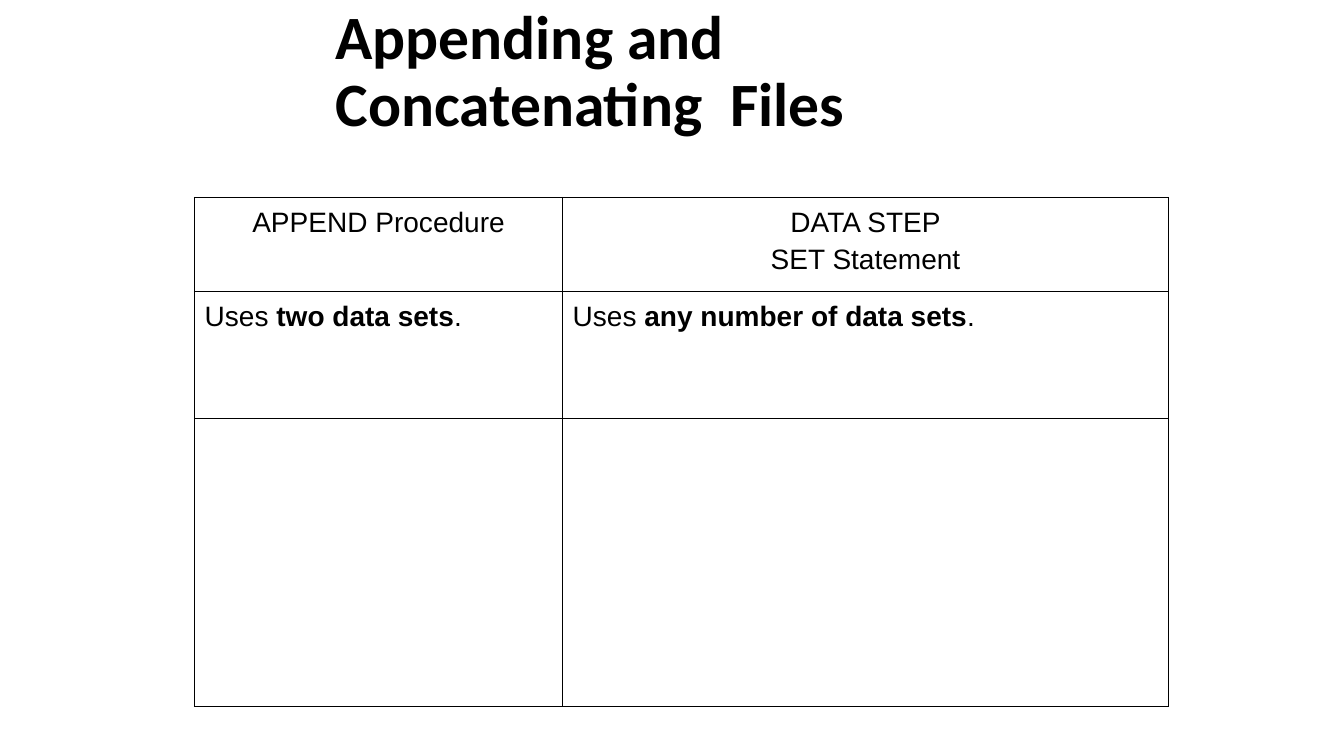
from lxml.etree import SubElement as Sub
from pptx import Presentation
from pptx.dml.color import RGBColor
from pptx.enum.text import MSO_ANCHOR as Anchor, PP_ALIGN as Align
from pptx.oxml.ns import qn
from pptx.util import Inches, Pt

BLACK = RGBColor(0x00, 0x00, 0x00)
WHITE = RGBColor(0xFF, 0xFF, 0xFF)
INSET = Inches(0.1)

WIDTHS = [3.65, 6.01]
HEIGHTS = [0.93, 1.26, 2.86]
HEADS = [["APPEND Procedure"], ["DATA STEP", "SET Statement"]]
USES = ["two data sets", "any number of data sets"]


def set_font(para, name, size):
    font = para.font
    font.name, font.size, font.color.rgb = name, Pt(size), BLACK


def add_title(slide, text):
    box = slide.shapes.add_textbox(Inches(3.23), 0, Inches(6.07), Inches(1.45))
    frame = box.text_frame
    frame.word_wrap = True
    frame.vertical_anchor = Anchor.MIDDLE
    para = frame.paragraphs[0]
    para.text = text
    para.line_spacing = 0.9
    set_font(para, "Calibri", 44)
    para.font.bold = True


def add_border(cell):
    props = cell._tc.get_or_add_tcPr()
    for side in ("a:lnL", "a:lnR", "a:lnT", "a:lnB"):
        line = Sub(props, qn(side), w=str(Pt(1)))
        fill = Sub(line, qn("a:solidFill"))
        Sub(fill, qn("a:srgbClr"), val=str(BLACK))


def style_cell(cell):
    cell.margin_left = cell.margin_right = INSET
    cell.margin_top = cell.margin_bottom = INSET
    add_border(cell)
    cell.fill.background()


def fill_cell(cell, lines, align):
    """Write one paragraph per line; a line is a list of (text, bold) runs."""
    frame = cell.text_frame
    for i, line in enumerate(lines):
        para = frame.add_paragraph() if i else frame.paragraphs[0]
        para.alignment = align
        para.space_before = Pt(4)
        set_font(para, "Arial", 20)
        for text, bold in line:
            run = para.add_run()
            run.text = text
            run.font.bold = bold


def add_grid(slide):
    frame = slide.shapes.add_table(
        len(HEIGHTS), len(WIDTHS), Inches(1.93), Inches(1.96),
        Inches(sum(WIDTHS)), Inches(sum(HEIGHTS)))
    table = frame.table
    table.first_row = table.horz_banding = False
    for col, width in zip(table.columns, WIDTHS):
        col.width = Inches(width)
    for row, height in zip(table.rows, HEIGHTS):
        row.height = Inches(height)
    for cell in table.iter_cells():
        style_cell(cell)
    for i, (head, use) in enumerate(zip(HEADS, USES)):
        lines = [[(text, False)] for text in head]
        fill_cell(table.cell(0, i), lines, Align.CENTER)
        line = [("Uses ", False), (use, True), (".", False)]
        fill_cell(table.cell(1, i), [line], Align.LEFT)


def main():
    deck = Presentation()
    deck.slide_width, deck.slide_height = Inches(13.33), Inches(7.5)
    slide = deck.slides.add_slide(deck.slide_layouts[6])
    back = slide.background.fill
    back.solid()
    back.fore_color.rgb = WHITE
    add_title(slide, "Appending and Concatenating  Files")
    add_grid(slide)
    deck.save("out.pptx")


if __name__ == "__main__":
    main()
